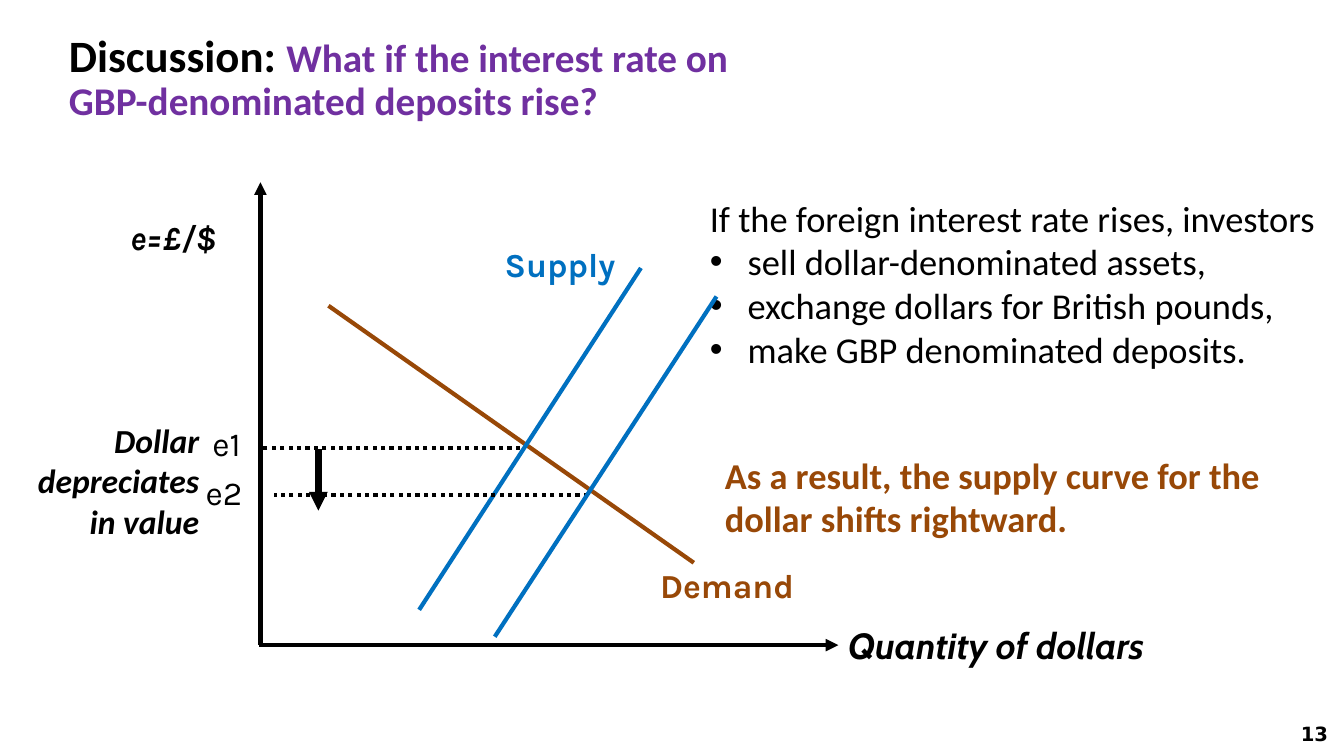
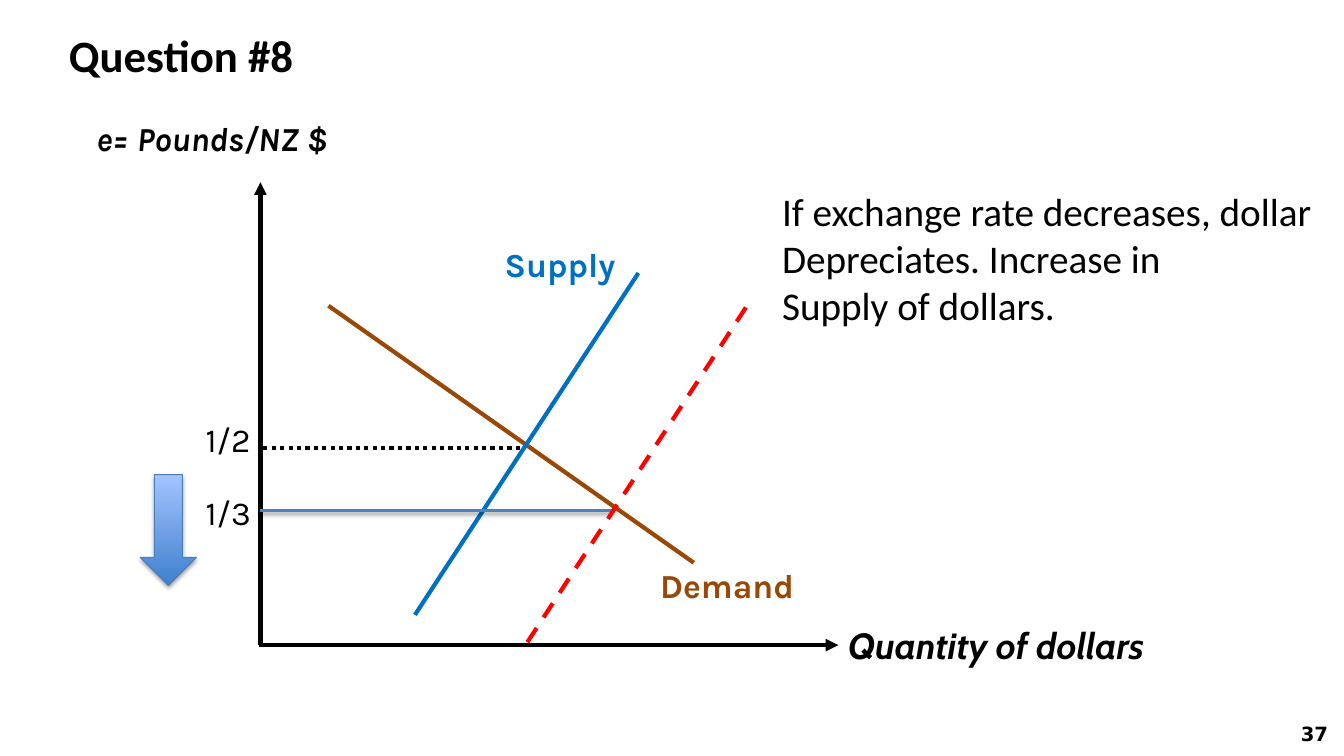
import dataclasses

import lxml.etree
import pptx
import pptx.dml.color
import pptx.enum.dml
import pptx.enum.shapes
import pptx.enum.text
import pptx.oxml
import pptx.oxml.ns
import pptx.util

Pt = pptx.util.Pt
RGB = pptx.dml.color.RGBColor.from_string
qn = pptx.oxml.ns.qn
Align = pptx.enum.text.PP_ALIGN
Dash = pptx.enum.dml.MSO_LINE


@dataclasses.dataclass(frozen=True)
class Theme:
    black: str = "000000"
    brown: str = "984807"
    blue: str = "0070C0"
    purple: str = "7030A0"
    red: str = "FF0000"
    steel: str = "4F81BD"
    edge: str = "4B7EBC"
    fade: tuple = ("3F80CE", "A4C4FF")
    # Looks: font, size, bold, italic
    title: tuple = ("Calibri", 32, True, False)
    ask: int = 28
    body: tuple = ("Calibri", 26, False, False)
    large: tuple = ("Calibri", 28, False, False)
    strong: tuple = ("Calibri", 26, True, False)
    note: tuple = ("Calibri", 24, True, True)
    curve: tuple = ("Karla", 24, True, False)
    rate: tuple = ("Karla", 24, True, True)
    tick: tuple = ("Karla", 24, False, False)
    axis: tuple = ("Cabin", 26, True, True)
    page: tuple = ("DejaVu Sans", 14, True, False)


theme = Theme()
deck = pptx.Presentation()
deck.slide_width = pptx.util.Inches(13.33)
deck.slide_height = pptx.util.Inches(7.5)

# All places are columns and rows of a grid of 160 by 90 cells
COL = deck.slide_width / 160
ROW = deck.slide_height / 90


def write(item, spot, lines, look, color=theme.black, align=Align.LEFT, wrap=True):
    """Place a text shape and fill it; a line that starts with a dot is a list item."""
    left, top, width, height = spot
    item.left, item.top = int(left * COL), int(top * ROW)
    item.width, item.height = int(width * COL), int(height * ROW)
    frame = item.text_frame
    frame.auto_size = pptx.enum.text.MSO_AUTO_SIZE.NONE
    frame.word_wrap = wrap
    frame.vertical_anchor = pptx.enum.text.MSO_ANCHOR.TOP
    for i, line in enumerate(lines):
        para = frame.add_paragraph() if i else frame.paragraphs[0]
        para.text = line.removeprefix("• ")
        if not line.startswith("• "):
            props = para._p.get_or_add_pPr()
            props.set("marL", "0")
            props.set("indent", "0")
            lxml.etree.SubElement(props, qn("a:buNone"))
        para.alignment = align
        para.space_before = Pt(0)
        font = para.font
        font.name, size, font.bold, font.italic = look
        font.size = Pt(size)
        font.color.rgb = RGB(color)


def draw(slide, ends, color=theme.black, width=3, dash=None, tip=None):
    """Draw a straight line; tip is headEnd or tailEnd for an arrow."""
    x1, y1, x2, y2 = ends
    item = slide.shapes.add_connector(
        pptx.enum.shapes.MSO_CONNECTOR.STRAIGHT,
        int(x1 * COL), int(y1 * ROW), int(x2 * COL), int(y2 * ROW))
    item.line.color.rgb = RGB(color)
    item.line.width = Pt(width)
    if dash:
        item.line.dash_style = dash
    props = item._element.spPr
    if tip:
        lxml.etree.SubElement(props.find(qn("a:ln")), qn("a:" + tip), type="triangle")
    lxml.etree.SubElement(props, qn("a:effectLst"))
    return item


# Parts that both slides share
pages = []
for num, head, span, supply in (
    ("13", "Discussion: ", (7, 3.4, 88.8, 12.1), (76.3, 31.9, 49.9, 72.6)),
    ("37", "Question #8", (7, 3.4, 73, 7.1), (76, 32.5, 49.4, 73.2)),
):
    slide = deck.slides.add_slide(deck.slide_layouts[1])
    write(slide.shapes.title, span, [head], theme.title)
    slide.shapes.title.text_frame.paragraphs[0].line_spacing = 0.9
    for spot, word, look, color, align, wrap in (
        ((77.4, 66.7, 19.3, 6), "Demand", theme.curve, theme.brown, Align.LEFT, False),
        ((58.9, 28.4, 16.2, 6), "Supply", theme.curve, theme.blue, Align.LEFT, False),
        ((99.8, 73.6, 40.3, 6.5), "Quantity of dollars", theme.axis, theme.black,
         Align.LEFT, True),
        ((151.4, 85.3, 7.9, 4.7), num, theme.page, theme.black, Align.RIGHT, True),
    ):
        write(slide.shapes.add_textbox(0, 0, 0, 0), spot, [word], look, color, align, wrap)
    draw(slide, (61.9, 53.3, 31.2, 53.3), dash=Dash.ROUND_DOT)
    draw(slide, (39.1, 36.4, 82.6, 67), theme.brown)
    draw(slide, supply, theme.blue)
    draw(slide, (31, 21.7, 31, 76.8), tip="headEnd")
    draw(slide, (30.8, 76.8, 99.8, 76.8), tip="tailEnd")
    pages.append(slide)
talk, quiz = pages

# Rate and tick labels
for slide, spot, word, look in (
    (talk, (14.3, 25.2, 15.6, 6), "e=£/$", theme.rate),
    (talk, (24.1, 49.8, 6.7, 6), "e1", theme.tick),
    (talk, (23.3, 55.6, 9.2, 6), "e2", theme.tick),
    (quiz, (10.3, 13.4, 36, 6), "e= Pounds/NZ $", theme.rate),
    (quiz, (23.3, 49.3, 8.4, 6), "1/2", theme.tick),
    (quiz, (23.3, 58, 8.4, 6), "1/3", theme.tick),
):
    write(slide.shapes.add_textbox(0, 0, 0, 0), spot, [word], look, wrap=False)

# Discussion: supply shifts to the right
ask = talk.shapes.title.text_frame.paragraphs[0].add_run()
ask.text = "What if the interest rate on GBP-denominated deposits rise?"
ask.font.size = Pt(theme.ask)
ask.font.color.rgb = RGB(theme.purple)
write(talk.placeholders[1], (83.3, 22.7, 74.6, 22.2), [
    "If the foreign interest rate rises, investors",
    "• sell dollar-denominated assets,",
    "• exchange dollars for British pounds,",
    "• make GBP denominated deposits.",
], theme.body)
write(talk.shapes.add_textbox(0, 0, 0, 0), (85.1, 53.3, 67.6, 11.8),
      ["As a result, the supply curve for the dollar shifts rightward."],
      theme.strong, theme.brown)
write(talk.shapes.add_textbox(0, 0, 0, 0), (2.5, 49.4, 22.4, 15.7),
      ["Dollar", "depreciates", "in value"], theme.note, align=Align.RIGHT)
draw(talk, (70, 58.9, 32.6, 58.9), dash=Dash.ROUND_DOT)
draw(talk, (37.9, 53.5, 37.9, 60.8), width=4.5, tip="tailEnd")
draw(talk, (85.3, 35.3, 58.9, 75.8), theme.blue)

# Question: the rate falls
write(quiz.placeholders[1], (91.9, 21.7, 67.1, 18.1), [
    "If exchange rate decreases, dollar",
    "Depreciates. Increase in",
    "Supply of dollars.",
], theme.large, wrap=False)
fall = quiz.shapes.add_shape(
    pptx.enum.shapes.MSO_SHAPE.DOWN_ARROW,
    int(16.7 * COL), int(56.5 * ROW), int(6.7 * COL), int(13.2 * ROW))
fall.fill.gradient()
fall.fill.gradient_angle = 90
for stop, color in zip(fall.fill.gradient_stops, theme.fade):
    stop.color.rgb = RGB(color)
fall.line.color.rgb = RGB(theme.edge)
fall.line.width = Pt(0.75)
fall.shadow.inherit = False
level = draw(quiz, (73.2, 60.8, 31, 60.8), theme.steel, 2)
draw(quiz, (88.8, 36.6, 62.3, 77.2), theme.red, dash=Dash.DASH)

for item, alpha, dist in ((fall, 35, 1.8), (level, 38, 1.6)):
    item._element.spPr.find(qn("a:effectLst")).append(pptx.oxml.parse_xml(
        f'<a:outerShdw {pptx.oxml.ns.nsdecls("a")} blurRad="{Pt(3.1)}" '
        f'dist="{Pt(dist)}" dir="5400000" rotWithShape="0">'
        f'<a:srgbClr val="{theme.black}"><a:alpha val="{alpha * 1000}"/></a:srgbClr>'
        '</a:outerShdw>'))

deck.save("out.pptx")
